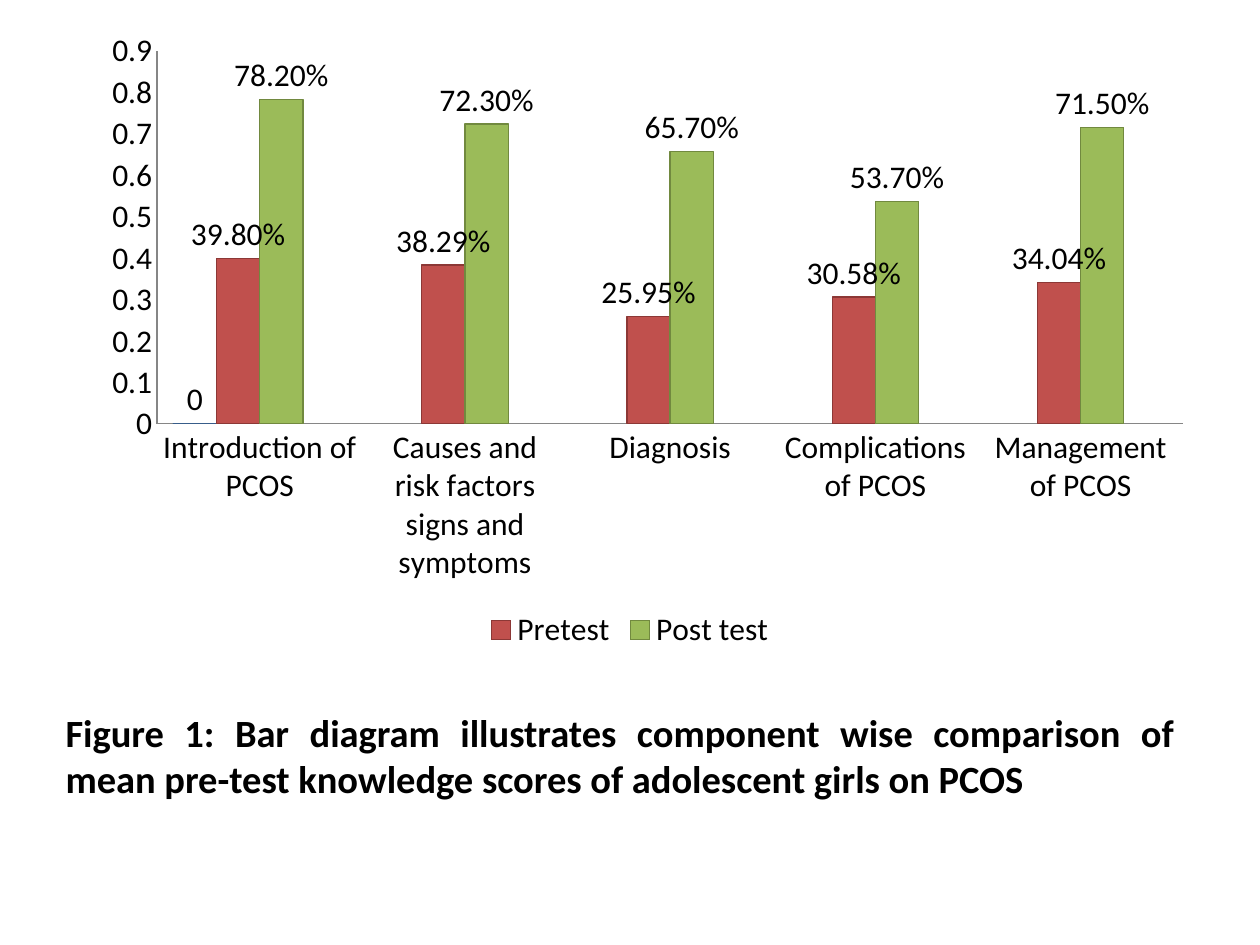
from lxml import etree
from pptx import Presentation
from pptx.chart.data import CategoryChartData
from pptx.dml.color import RGBColor
from pptx.enum.chart import XL_CHART_TYPE, XL_LABEL_POSITION, XL_LEGEND_POSITION, XL_TICK_MARK
from pptx.enum.text import MSO_ANCHOR, PP_ALIGN
from pptx.oxml.ns import qn
from pptx.util import Inches, Pt

COLUMNS = XL_CHART_TYPE.COLUMN_CLUSTERED
OUTSIDE_END = XL_LABEL_POSITION.OUTSIDE_END
BOTTOM = XL_LEGEND_POSITION.BOTTOM
NO_TICK = XL_TICK_MARK.NONE
MIDDLE = MSO_ANCHOR.MIDDLE
JUSTIFY = PP_ALIGN.JUSTIFY
TITLE_ONLY = 5

CATEGORIES = [
    "Introduction of PCOS",
    "Causes and risk factors signs and symptoms",
    "Diagnosis",
    "Complications of PCOS",
    "Management of PCOS",
]
# name, values, fill, outline, label format
SERIES = [
    ("Series 1", [0, None, None, None, None], "4F81BD", "385D8A", "General"),
    ("Pretest", [0.398, 0.3829, 0.2595, 0.3058, 0.3404], "C0504D", "8C3836", "0.00%"),
    ("Post test", [0.782, 0.723, 0.657, 0.537, 0.715], "9BBB59", "71893F", "0.00%"),
    ("Series 4", [None] * 5, "8064A2", "5C4776", "General"),
]
HIDDEN_LEGEND_ENTRIES = [0, 3]
PLOT_LAYOUT = {
    "layoutTarget": "inner", "xMode": "edge", "yMode": "edge",
    "x": 0.083, "y": 0.031, "w": 0.905, "h": 0.598,
}


def color(value):
    return RGBColor.from_string(value)


def add_value(parent, tag, value):
    """Append a chart element that carries its value in a val attribute."""
    etree.SubElement(parent, qn(f"c:{tag}")).set("val", str(value))


deck = Presentation()
deck.slide_width, deck.slide_height = Inches(10), Inches(7.5)
page = deck.slides.add_slide(deck.slide_layouts[TITLE_ONLY])

# Caption
title = page.shapes.title
title.left, title.top = Inches(0.42), Inches(5.33)
title.width, title.height = Inches(9), Inches(1.33)
title.text_frame.vertical_anchor = MIDDLE
para = title.text_frame.paragraphs[0]
para.alignment = JUSTIFY
span = para.add_run()
span.text = ("Figure 1: Bar diagram illustrates component wise comparison of "
             "mean pre-test knowledge scores of adolescent girls on PCOS")
for name, value in {"name": "Calibri", "size": Pt(22), "bold": True}.items():
    setattr(span.font, name, value)
span.font.color.rgb = color("000000")

# Chart
data = CategoryChartData()
data.categories = CATEGORIES
for name, values, *_ in SERIES:
    data.add_series(name, values)
chart = page.shapes.add_chart(
    COLUMNS, Inches(0.5), Inches(0.25), Inches(9), Inches(4.95), data).chart
chart.has_title = False
chart.font.name = "Calibri"
chart.font.size = Pt(18)
chart.font.color.rgb = color("000000")

plot = chart.plots[0]
plot.gap_width = 75
plot.overlap = 0
plot.vary_by_categories = False
for series, (_, _, fill, outline, label_format) in zip(plot.series, SERIES):
    series.invert_if_negative = False
    series.format.fill.solid()
    series.format.fill.fore_color.rgb = color(fill)
    series.format.line.color.rgb = color(outline)
    series.format.line.width = Pt(0.75)
    labels = series.data_labels
    label_values = {
        "show_value": True, "number_format": label_format,
        "number_format_is_linked": False, "position": OUTSIDE_END,
    }
    for name, value in label_values.items():
        setattr(labels, name, value)

for axis in (chart.category_axis, chart.value_axis):
    axis.has_major_gridlines = False
    axis.major_tick_mark = axis.minor_tick_mark = NO_TICK
    axis.format.line.color.rgb = color("868686")
    axis.format.line.width = Pt(0.75)
value_axis = chart.value_axis
value_axis.minimum_scale, value_axis.maximum_scale = 0, 0.9
value_axis.major_unit = 0.1
value_axis.tick_labels.number_format = "General"
value_axis.tick_labels.number_format_is_linked = False

# Legend without the two helper series
chart.has_legend = True
chart.legend.position = BOTTOM
chart.legend.include_in_layout = False
legend = chart.legend._element
legend_position = legend.find(qn("c:legendPos"))
for index in reversed(HIDDEN_LEGEND_ENTRIES):
    entry = etree.Element(qn("c:legendEntry"))
    add_value(entry, "idx", index)
    add_value(entry, "delete", 1)
    legend_position.addnext(entry)

# Fixed place for the plot area
plot_area = chart._chartSpace.chart.plotArea
for old_layout in plot_area.findall(qn("c:layout")):
    plot_area.remove(old_layout)
layout = etree.Element(qn("c:layout"))
manual = etree.SubElement(layout, qn("c:manualLayout"))
for tag, value in PLOT_LAYOUT.items():
    add_value(manual, tag, value)
plot_area.insert(0, layout)

deck.save("out.pptx")
